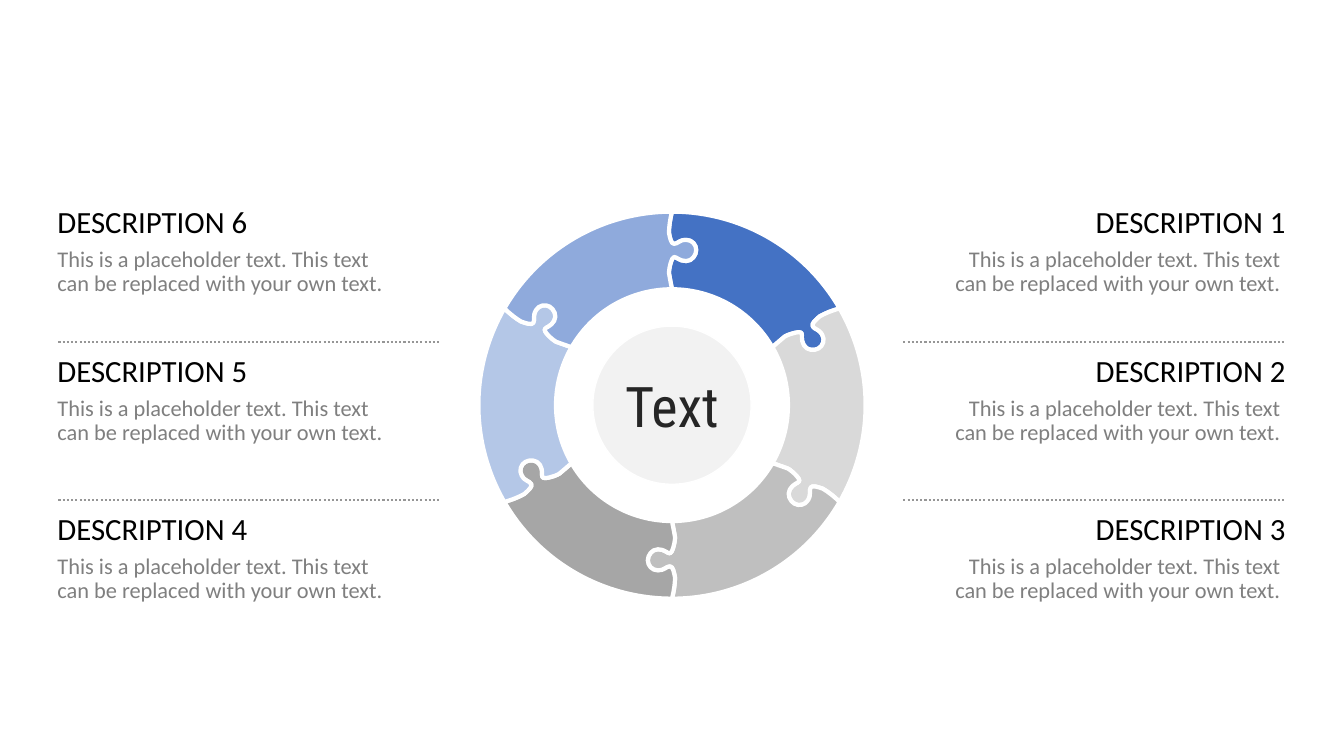
import math
from lxml import etree
from pptx import Presentation, util as u
from pptx.dml import color
from pptx.enum import dml, shapes, text
from pptx.oxml import ns


def rgb(value):
    return color.RGBColor.from_string(value)


def rotate(points, degrees, scale=1):
    cosine, sine = math.cos(math.radians(degrees)), math.sin(math.radians(degrees))
    return [(scale * (x * cosine + y * sine), scale * (y * cosine - x * sine))
            for x, y in points]


presentation = Presentation()
presentation.slide_width, presentation.slide_height = u.Inches(13.33), u.Inches(7.5)
slide = presentation.slides.add_slide(presentation.slide_layouts[6])

CENTER_X, CENTER_Y = 13.33 / 2, 4.02
OUTER, INNER, HUB = 1.92, 1.15, 0.785
STEP = 60
PIECE_COLORS = ["4472C4", "D9D9D9", "BFBFBF", "A6A6A6", "B4C7E7", "8FAADC"]

joint = [
    (0, OUTER), (-0.02, 1.84), (-0.03, 1.77),
    (-0.03, 1.71), (-0.02, 1.66), (-0.01, 1.6),
    (0.02, 1.6), (0.06, 1.6), (0.07, 1.64),
    (0.14, 1.64), (0.2, 1.64), (0.24, 1.59),
    (0.24, 1.54), (0.24, 1.49), (0.2, 1.43),
    (0.14, 1.43), (0.07, 1.43), (0.05, 1.47),
    (0.02, 1.47), (0, 1.47), (-0.03, 1.37),
    (-0.03, 1.31), (-0.02, 1.25), (0, INNER), (0, INNER),
]
handle = 4 / 3 * math.tan(math.radians(STEP / 8))
half_arc = [(0, 1), (handle, 1)] + rotate([(-handle, 1)], STEP / 2)
arc = half_arc + rotate(half_arc, STEP / 2) + rotate([(0, 1)], STEP)

for index, fill in enumerate(PIECE_COLORS):
    start, end = index * STEP, (index + 1) * STEP
    outline = rotate(arc, start, OUTER)[:-1] + rotate(joint, end)[:-1]
    outline += rotate(arc, start, INNER)[:0:-1] + rotate(joint, start)[::-1]
    points = [(u.Inches(CENTER_X + x), u.Inches(CENTER_Y - y)) for x, y in outline]
    builder = slide.shapes.build_freeform(*points[0])
    builder.add_line_segments(points[1:], close=True)
    piece = builder.convert_to_shape()
    segments = list(piece._element.iter(ns.qn("a:lnTo")))
    for first, second, third in zip(segments[::3], segments[1::3], segments[2::3]):
        first.tag = ns.qn("a:cubicBezTo")
        for segment in (second, third):
            first.append(segment[0])
            segment.getparent().remove(segment)
    piece.shadow.inherit = False
    piece.fill.solid()
    piece.fill.fore_color.rgb = rgb(fill)
    piece.line.color.rgb = rgb("FFFFFF")
    piece.line.width = u.Pt(3)

hub = slide.shapes.add_shape(
    shapes.MSO_SHAPE.OVAL, u.Inches(CENTER_X - HUB), u.Inches(CENTER_Y - HUB),
    u.Inches(2 * HUB), u.Inches(2 * HUB))
hub.shadow.inherit = False
hub.fill.solid()
hub.fill.fore_color.rgb = rgb("F2F2F2")
hub.line.color.rgb = rgb("FFFFFF")
hub.line.width = u.Pt(1)
hub.text_frame.word_wrap = False
hub.text_frame.vertical_anchor = text.MSO_ANCHOR.MIDDLE
paragraph = hub.text_frame.paragraphs[0]
paragraph.text = "Text"
paragraph.alignment = text.PP_ALIGN.CENTER
paragraph.font.name, paragraph.font.size = "Roboto Condensed", u.Pt(40)
paragraph.font.color.rgb = rgb("262626")

BODY = "This is a placeholder text. This text \vcan be replaced with your own text."
ROW_TOPS = [2.01, 3.49, 5.06]
COLUMNS = [
    (0.57, 0.58, text.PP_ALIGN.LEFT, [6, 5, 4], BODY),
    (9.19, 8.96, text.PP_ALIGN.RIGHT, [1, 2, 3], BODY + " "),
]
for text_left, rule_left, alignment, numbers, body in COLUMNS:
    for top, number in zip(ROW_TOPS, numbers):
        box = slide.shapes.add_textbox(
            u.Inches(text_left), u.Inches(top), u.Inches(3.56), u.Inches(0.94))
        frame = box.text_frame
        frame.word_wrap = True
        frame.auto_size = text.MSO_AUTO_SIZE.SHAPE_TO_FIT_TEXT
        frame.margin_left = frame.margin_right = frame.margin_top = frame.margin_bottom = 0
        heading, description = frame.paragraphs[0], frame.add_paragraph()
        description.line_spacing = 0.9
        for paragraph, words, size, ink in [
            (heading, f"DESCRIPTION {number}", 22, "000000"),
            (description, body, 16, "7F7F7F"),
        ]:
            paragraph.text = words
            paragraph.alignment = alignment
            paragraph.space_after = u.Pt(6)
            paragraph.font.name, paragraph.font.size = "Calibri", u.Pt(size)
            paragraph.font.color.rgb = rgb(ink)

    for top in ROW_TOPS[1:]:
        rule_y = u.Inches(top - 0.1)
        rule = slide.shapes.add_connector(
            shapes.MSO_CONNECTOR.STRAIGHT, u.Inches(rule_left), rule_y,
            u.Inches(rule_left + 3.78), rule_y)
        rule.line.color.rgb = rgb("969696")
        rule.line.width = u.Pt(1.5)
        rule.line.dash_style = dml.MSO_LINE.ROUND_DOT
        etree.SubElement(rule._element.spPr, ns.qn("a:effectLst"))

presentation.save("out.pptx")
